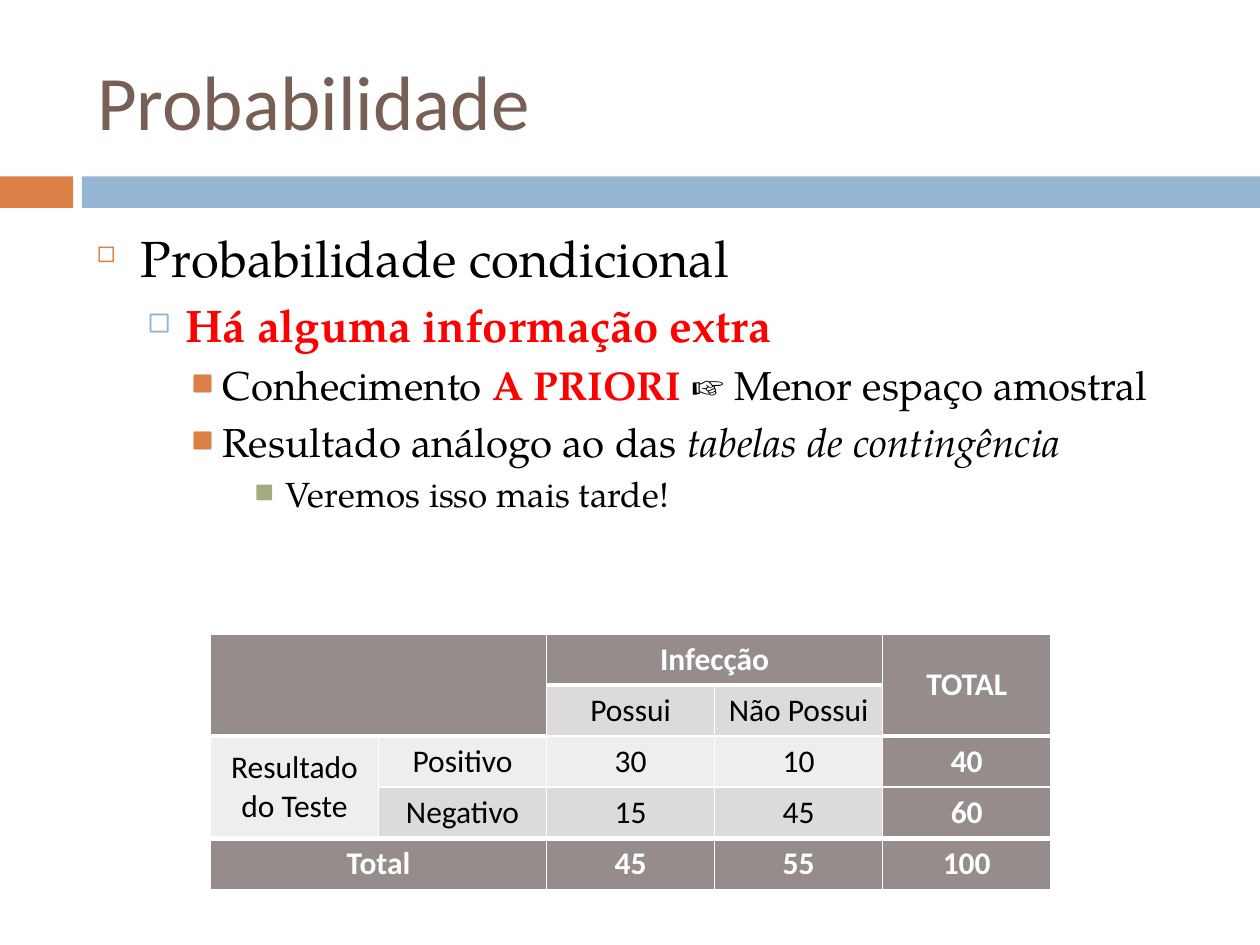
from lxml.etree import SubElement
from pptx import Presentation
from pptx.dml.color import RGBColor
from pptx.enum.shapes import MSO_SHAPE
from pptx.enum.text import MSO_ANCHOR, PP_ALIGN
from pptx.oxml.ns import qn
from pptx.util import Inches, Pt

TITLE_FONT, BODY_FONT = "Calibri", "TeX Gyre Pagella"
BROWN, ORANGE, BLUE, GREEN = "775F55", "DD8047", "94B6D2", "A5AB81"
RED, BLACK, WHITE = "FF0000", "000000", "FFFFFF"
HEADER, DARK_BAND, LIGHT_BAND = "968C8C", "DDDADA", "EFEEEE"

# indent, hanging, space before, bullet, bullet colour, bullet percent, size
LEVELS = [
    (0.35, 0.35, 7, "◻", ORANGE, 60, 29),
    (0.7, 0.3, 5.5, "□", BLUE, 70, 26),
    (1, 0.25, 5, "■", ORANGE, 75, 23),
    (1.5, 0.25, 4, "■", GREEN, 75, 20),
]
OUTLINE = [
    (0, [("Probabilidade condicional", {})]),
    (1, [("Há alguma informação extra", {"color": RED, "bold": True})]),
    (2, [("Conhecimento ", {}), ("A PRIORI", {"color": RED, "bold": True}),
         (" ☞ Menor espaço amostral", {})]),
    (2, [("Resultado análogo ao das ", {}),
         ("tabelas de contingência", {"italic": True})]),
    (3, [("Veremos isso mais tarde!", {})]),
]
CONTINGENCY = [
    ["", "", "Infecção", "", "TOTAL"],
    ["", "", "Possui", "Não Possui", ""],
    ["Resultado do Teste", "Positivo", "30", "10", "40"],
    ["", "Negativo", "15", "45", "60"],
    ["Total", "", "45", "55", "100"],
]
MERGES = [((0, 0), (1, 1)), ((0, 2), (0, 3)), ((0, 4), (1, 4)),
          ((2, 0), (3, 0)), ((4, 0), (4, 1))]


def rgb(value):
    """Turn a hex string into a colour."""
    return RGBColor.from_string(value)


def add_text(paragraph, text, size=18, font=BODY_FONT, color=BLACK, bold=False, italic=False):
    """Append a formatted run to a paragraph."""
    run = paragraph.add_run()
    run.text = text
    run.font.size = Pt(size)
    run.font.name = font
    run.font.color.rgb = rgb(color)
    run.font.bold = bold
    run.font.italic = italic


def set_bullet(paragraph, character, color, percent, indent, hanging):
    """Give a paragraph a coloured bullet and a hanging indent."""
    properties = paragraph._p.get_or_add_pPr()
    properties.set("marL", str(Inches(indent)))
    properties.set("indent", str(-Inches(hanging)))
    bullet_color = SubElement(properties, qn("a:buClr"))
    SubElement(bullet_color, qn("a:srgbClr"), val=color)
    SubElement(properties, qn("a:buSzPct"), val=str(percent * 1000))
    SubElement(properties, qn("a:buFont"), typeface=BODY_FONT)
    SubElement(properties, qn("a:buChar"), char=character)


def is_thick(line, column):
    """Tell whether a horizontal grid line is heavy at a column."""
    return line in (1, 4) or (line == 2 and column not in (2, 3))


def is_header(row, column):
    """Tell whether a cell belongs to the headings or totals."""
    return row in (0, 4) or column == 4 or (row == 1 and column < 2)


def set_borders(cell, row, column):
    """Draw white borders around a cell."""
    widths = {"L": 1, "R": 1, "T": 3 if is_thick(row, column) else 1,
              "B": 3 if is_thick(row + 1, column) else 1}
    properties = cell._tc.get_or_add_tcPr()
    for side, width in widths.items():
        line = SubElement(properties, qn(f"a:ln{side}"), w=str(Pt(width)))
        fill = SubElement(line, qn("a:solidFill"))
        SubElement(fill, qn("a:srgbClr"), val=WHITE)


class SlideBuilder:
    """Hold the current slide and add elements in its style."""

    def __init__(self, presentation):
        """Start a title-only slide."""
        self.slide = presentation.slides.add_slide(presentation.slide_layouts[5])

    def add_band(self, left, width, color):
        """Add a part of the band below the title."""
        shape = self.slide.shapes.add_shape(
            MSO_SHAPE.RECTANGLE, Inches(left), Inches(1.4), Inches(width), Inches(0.25))
        shape.shadow.inherit = False
        shape.fill.solid()
        shape.fill.fore_color.rgb = rgb(color)
        shape.line.fill.background()

    def add_title(self, text):
        """Place and fill the title."""
        title = self.slide.shapes.title
        title.left, title.top = Inches(0.67), Inches(0.25)
        title.width, title.height = Inches(8.92), Inches(1.08)
        title.text_frame.vertical_anchor = MSO_ANCHOR.MIDDLE
        paragraph = title.text_frame.paragraphs[0]
        paragraph.alignment = PP_ALIGN.LEFT
        add_text(paragraph, text, size=44, font=TITLE_FONT, color=BROWN)

    def add_outline(self, items):
        """Add the bulleted outline."""
        box = self.slide.shapes.add_textbox(
            Inches(0.67), Inches(1.75), Inches(8.92), Inches(5.23))
        frame = box.text_frame
        frame.word_wrap = True
        for index, (level, runs) in enumerate(items):
            paragraph = frame.add_paragraph() if index else frame.paragraphs[0]
            indent, hanging, space, character, color, percent, size = LEVELS[level]
            paragraph.level = level
            paragraph.space_before = Pt(space)
            set_bullet(paragraph, character, color, percent, indent, hanging)
            for text, style in runs:
                add_text(paragraph, text, size=size, **style)

    def add_table(self, rows, merges):
        """Add the contingency table."""
        table = self.slide.shapes.add_table(
            len(rows), len(rows[0]), Inches(1.67), Inches(5.03),
            Inches(6.67), Inches(2.03)).table
        table.first_row = table.horz_banding = False
        for first, last in merges:
            table.cell(*first).merge(table.cell(*last))
        for row, texts in enumerate(rows):
            for column, text in enumerate(texts):
                self.fill_cell(table.cell(row, column), row, column, text)

    def fill_cell(self, cell, row, column, text):
        """Format one table cell and write its text."""
        header = is_header(row, column)
        set_borders(cell, row, column)
        cell.fill.solid()
        band = DARK_BAND if row % 2 else LIGHT_BAND
        cell.fill.fore_color.rgb = rgb(HEADER if header else band)
        cell.vertical_anchor = MSO_ANCHOR.MIDDLE
        paragraph = cell.text_frame.paragraphs[0]
        paragraph.alignment = PP_ALIGN.CENTER
        if text:
            add_text(paragraph, text, font=TITLE_FONT,
                     color=WHITE if header else BLACK, bold=header)


def main():
    """Build and save the slide."""
    presentation = Presentation()
    presentation.slide_width, presentation.slide_height = Inches(10), Inches(7.5)
    builder = SlideBuilder(presentation)
    builder.add_band(0, 0.58, ORANGE)
    builder.add_band(0.65, 9.35, BLUE)
    builder.add_title("Probabilidade")
    builder.add_outline(OUTLINE)
    builder.add_table(CONTINGENCY, MERGES)
    presentation.save("out.pptx")


if __name__ == "__main__":
    main()
